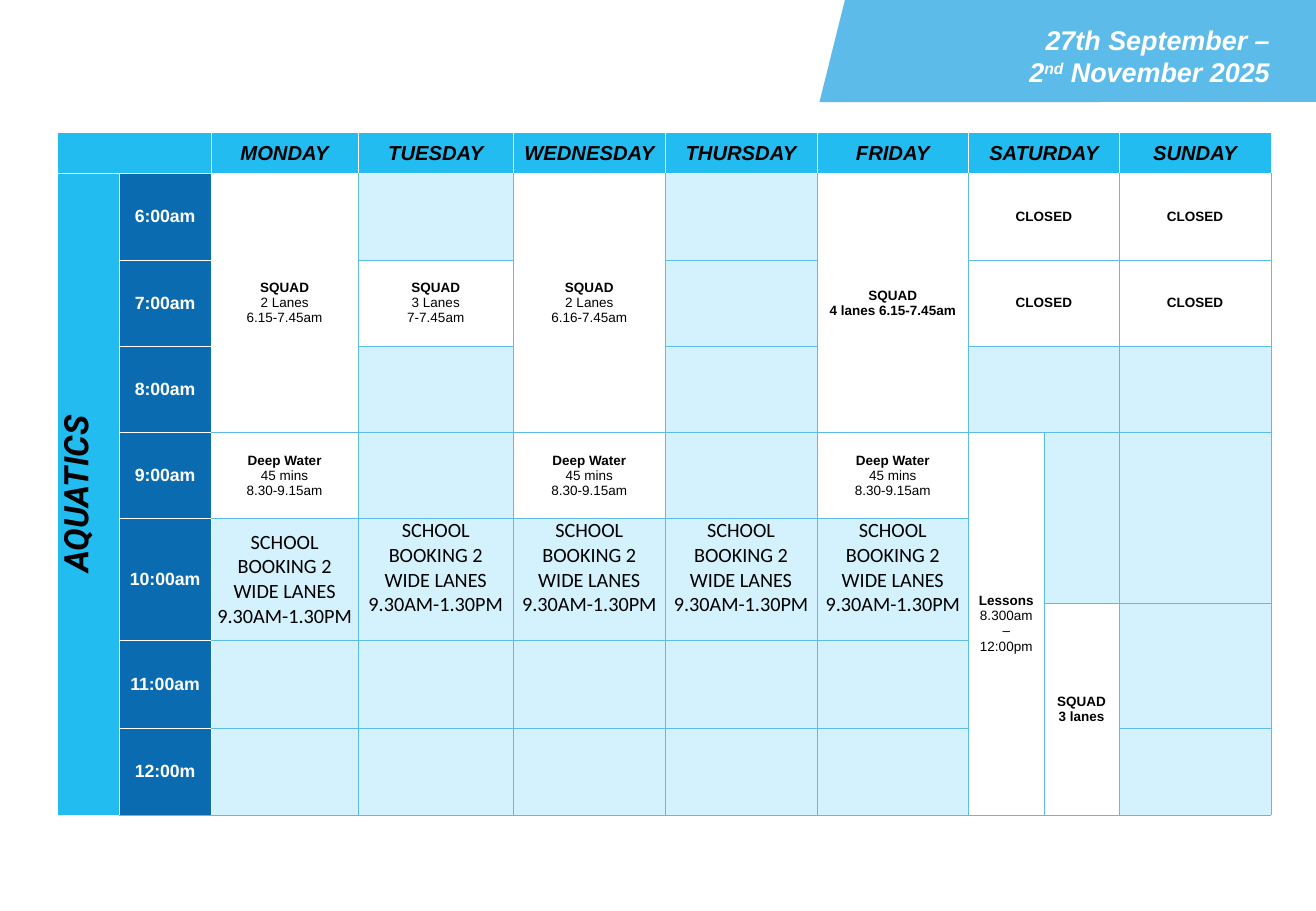
from lxml import etree
from pptx import Presentation
from pptx.dml.color import RGBColor
from pptx.enum.shapes import MSO_SHAPE
from pptx.enum.text import MSO_ANCHOR, PP_ALIGN
from pptx.oxml.ns import qn
from pptx.util import Inches, Pt

CENTER, RIGHT = PP_ALIGN.CENTER, PP_ALIGN.RIGHT
TOP, MIDDLE = MSO_ANCHOR.TOP, MSO_ANCHOR.MIDDLE

WHITE = RGBColor(0xFF, 0xFF, 0xFF)
BLACK = RGBColor(0x00, 0x00, 0x00)
BANNER_BLUE = RGBColor(0x5D, 0xBB, 0xEA)
HEADER_BLUE = RGBColor(0x22, 0xBC, 0xF0)
TIME_BLUE = RGBColor(0x0B, 0x6B, 0xB0)
FREE_BLUE = RGBColor(0xD4, 0xF2, 0xFD)

DAYS = {"MONDAY": 2, "TUESDAY": 3, "WEDNESDAY": 4, "THURSDAY": 5,
        "FRIDAY": 6, "SATURDAY": 7, "SUNDAY": 9}
TIMES = {"6:00am": 1, "7:00am": 2, "8:00am": 3, "9:00am": 4,
         "10:00am": 5, "11:00am": 7, "12:00m": 8}
COLUMNS = [0.51, 0.76, 1.21, 1.28, 1.25, 1.25, 1.25, 0.62, 0.62, 1.25]
ROWS = [0.34, 0.71, 0.71, 0.71, 0.71, 0.7, 0.3, 0.73, 0.71]

# (row, column, last row, last column)
MERGES = [(0, 0, 0, 1), (0, 7, 0, 8), (1, 0, 8, 0),
          (1, 7, 1, 8), (2, 7, 2, 8), (3, 7, 3, 8),
          (4, 7, 8, 7), (4, 8, 5, 8), (6, 8, 8, 8), (4, 9, 5, 9), (6, 9, 7, 9)]
MERGES += [(1, column, 3, column) for column in (2, 4, 6)]
MERGES += [(5, column, 6, column) for column in range(1, 7)]

# (row, column): (bold lines, plain lines)
SESSIONS = {
    (1, 2): (["SQUAD"], ["2 Lanes", "6.15-7.45am"]),
    (2, 3): (["SQUAD"], ["3 Lanes", "7-7.45am"]),
    (1, 4): (["SQUAD"], ["2 Lanes", "6.16-7.45am"]),
    (1, 6): (["SQUAD", "4 lanes 6.15-7.45am"], []),
    (4, 7): (["Lessons"], ["8.300am – 12:00pm"]),
    (6, 8): (["SQUAD", "3 lanes"], []),
}
for column in (2, 4, 6):
    SESSIONS[4, column] = (["Deep Water"], ["45 mins", "8.30-9.15am"])
for row in (1, 2):
    for column in (7, 9):
        SESSIONS[row, column] = (["CLOSED"], [])


def write(para, text, size=8, font="Arial", color=BLACK, bold=False,
          italic=False, align=CENTER):
    para.alignment = align
    span = para.add_run()
    span.text = text
    span.font.size = Pt(size)
    span.font.name = font
    span.font.color.rgb = color
    span.font.bold = bold
    span.font.italic = italic
    return span


def style_cell(cell, fill, edges):
    """Set the fill and the left, right, top and bottom border colours."""
    properties = cell._tc.get_or_add_tcPr()
    for side, color in zip("LRTB", edges):
        line = etree.SubElement(properties, qn(f"a:ln{side}"), w=str(Pt(0.5)))
        solid = etree.SubElement(line, qn("a:solidFill"))
        etree.SubElement(solid, qn("a:srgbClr"), val=str(color))
    cell.fill.solid()
    cell.fill.fore_color.rgb = fill


deck = Presentation()
deck.slide_width, deck.slide_height = Inches(10.84), Inches(7.5)
page = deck.slides.add_slide(deck.slide_layouts[6])

# Banner with the dates
for kind, left, width in ((MSO_SHAPE.PARALLELOGRAM, 6.75, 2.52),
                          (MSO_SHAPE.RECTANGLE, 7.28, 3.56)):
    banner = page.shapes.add_shape(kind, Inches(left), 0, Inches(width), Inches(0.84))
    banner.shadow.inherit = False
    banner.fill.solid()
    banner.fill.fore_color.rgb = BANNER_BLUE
    banner.line.fill.background()

box = page.shapes.add_textbox(Inches(6.59), Inches(0.19), Inches(3.87), Inches(0.54))
frame = box.text_frame
frame.word_wrap = True
frame.margin_left = frame.margin_right = frame.margin_top = frame.margin_bottom = 0
dates = frame.paragraphs[0]
heading = dict(size=16, color=WHITE, bold=True, italic=True, align=RIGHT)
write(dates, "27th September –", **heading)
dates.add_line_break()
write(dates, "2", **heading)
ordinal = write(dates, "nd", **heading)
ordinal.font._element.set("baseline", "30000")
write(dates, " November 2025", **heading)

# Timetable grid
timetable = page.shapes.add_table(len(ROWS), len(COLUMNS), Inches(0.47), Inches(1.09),
                                  Inches(sum(COLUMNS)), Inches(sum(ROWS))).table
timetable.first_row = timetable.horz_banding = False
for column, width in enumerate(COLUMNS):
    timetable.columns[column].width = Inches(width)
for row, height in enumerate(ROWS):
    timetable.rows[row].height = Inches(height)

session_cells = set(SESSIONS)
for top, left, bottom, right in MERGES:
    timetable.cell(top, left).merge(timetable.cell(bottom, right))
    if (top, left) in SESSIONS:
        session_cells |= {(row, column) for row in range(top, bottom + 1)
                          for column in range(left, right + 1)}

for row in range(len(ROWS)):
    for column in range(len(COLUMNS)):
        cell = timetable.cell(row, column)
        cell.vertical_anchor = MIDDLE
        cell.margin_left = cell.margin_right = Inches(0.05 if row else 0.01)
        cell.margin_top = cell.margin_bottom = Inches(0 if row else 0.02)
        if row == 0 or column == 0:
            fill = HEADER_BLUE
        elif column == 1:
            fill = TIME_BLUE
        else:
            fill = WHITE if (row, column) in session_cells else FREE_BLUE
        framed = row == 0 or column < 2
        edges = [WHITE if framed or column == 2 else BANNER_BLUE,
                 WHITE if framed else BANNER_BLUE,
                 WHITE if framed or row == 1 else BANNER_BLUE,
                 BANNER_BLUE if column == 1 and row == 8 else WHITE if framed else BANNER_BLUE]
        style_cell(cell, fill, edges)

        para = cell.text_frame.paragraphs[0]
        bold_lines, plain_lines = SESSIONS.get((row, column), ([], []))
        for index, text in enumerate(bold_lines + plain_lines):
            if index:
                para = cell.text_frame.add_paragraph()
            write(para, text, bold=index < len(bold_lines))

# Day, time and activity headings
for day, column in DAYS.items():
    write(timetable.cell(0, column).text_frame.paragraphs[0], day,
          size=12, bold=True, italic=True)
for time, row in TIMES.items():
    write(timetable.cell(row, 1).text_frame.paragraphs[0], time,
          size=10.5, color=WHITE, bold=True)
activity = timetable.cell(1, 0)
activity._tc.get_or_add_tcPr().set("vert", "vert270")
write(activity.text_frame.paragraphs[0], "AQUATICS",
      size=20, font="Roboto", bold=True, italic=True)

# School bookings on weekdays
for column in range(2, 7):
    booking = timetable.cell(5, column)
    booking.vertical_anchor = MIDDLE if column == 2 else TOP
    write(booking.text_frame.paragraphs[0], "SCHOOL BOOKING 2 WIDE LANES 9.30AM-1.30PM",
          size=12, font="Calibri")

# Empty cells keep a small type size so that they do not stretch their rows
for cell in timetable.iter_cells():
    if not cell.text:
        etree.SubElement(cell.text_frame.paragraphs[0]._p, qn("a:endParaRPr"), sz="800")

deck.save("out.pptx")
